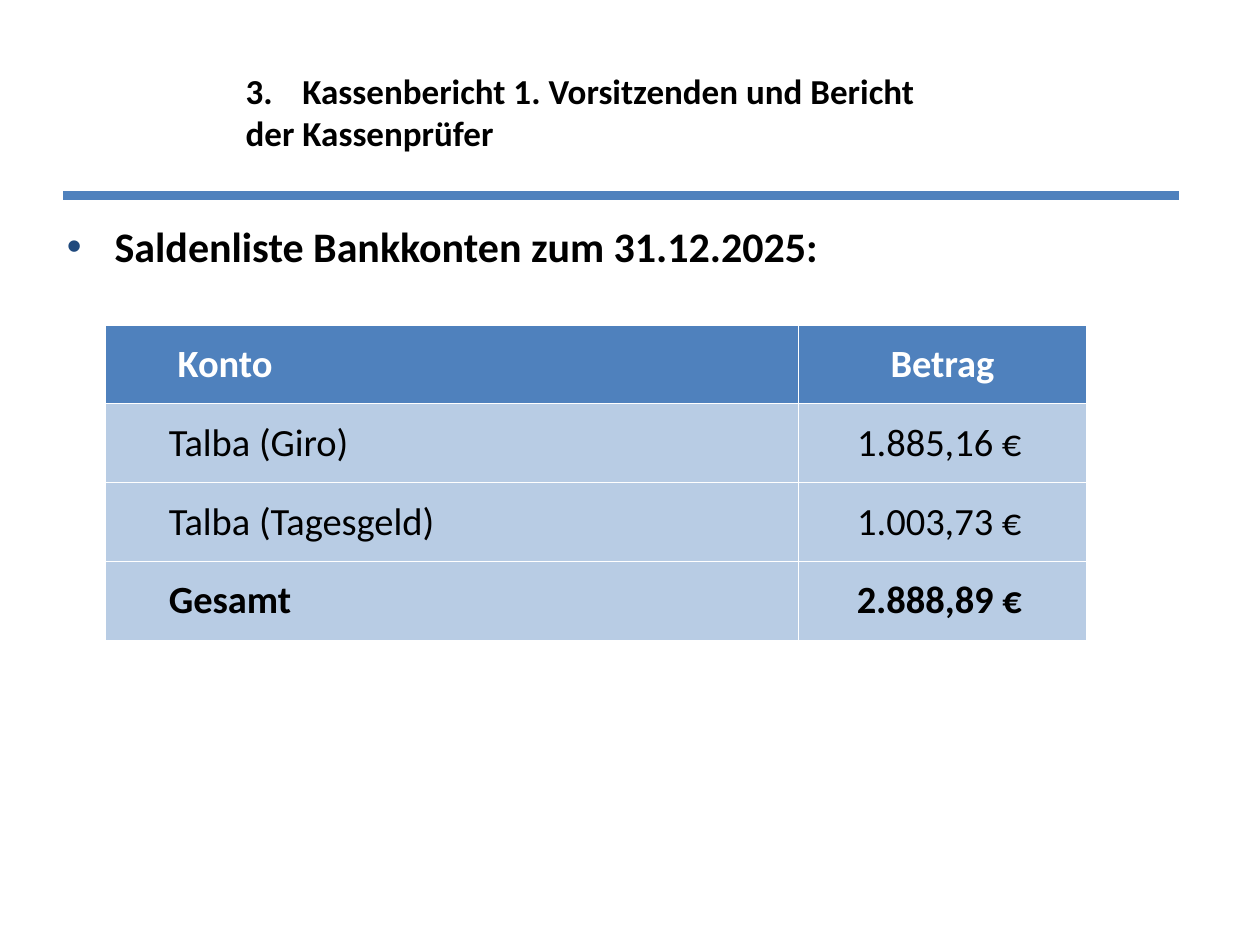
from lxml.etree import SubElement
from pptx import Presentation
from pptx.dml.color import RGBColor
from pptx.enum.shapes import MSO_CONNECTOR
from pptx.enum.text import MSO_ANCHOR, MSO_AUTO_SIZE, PP_ALIGN
from pptx.oxml.ns import qn
from pptx.util import Inches, Pt

BLUE = RGBColor(0x4F, 0x81, 0xBD)
PALE = RGBColor(0xB8, 0xCC, 0xE4)
NAVY = RGBColor(0x1F, 0x49, 0x7D)
BLACK = RGBColor(0, 0, 0)
WHITE = RGBColor(255, 255, 255)

ROWS = [
    ("Konto", "Betrag"),
    ("Talba (Giro)", "1.885,16 €"),
    ("Talba (Tagesgeld)", "1.003,73 €"),
    ("Gesamt", "2.888,89 €"),
]
COL_WIDTHS = (5.5, 2.28)
ROW_HEIGHT = 0.625


def write(p, text, size=22, color=BLACK, bold=False, align=PP_ALIGN.LEFT):
    """Put one formatted run into a paragraph."""
    p.alignment = align
    r = p.add_run()
    r.text = text
    r.font.name = "Calibri"
    r.font.size = Pt(size)
    r.font.bold = bold
    r.font.color.rgb = color


def place(sp, left, top, width, height):
    """Move a placeholder and return its text frame at a fixed size."""
    sp.left, sp.top = Inches(left), Inches(top)
    sp.width, sp.height = Inches(width), Inches(height)
    tf = sp.text_frame
    tf.word_wrap = True
    tf.auto_size = MSO_AUTO_SIZE.NONE
    return tf


def add_title(s, text):
    """Fill the title, with a tab stop after its number."""
    tf = place(s.shapes.title, 1.85, 0.3, 6.22, 1.17)
    tf.vertical_anchor = MSO_ANCHOR.MIDDLE
    tf.margin_right = Inches(0.6)
    p = tf.paragraphs[0]
    tabs = SubElement(p._p.get_or_add_pPr(), qn("a:tabLst"))
    SubElement(tabs, qn("a:tab"), pos=str(Inches(0.45)), algn="l")
    write(p, text, size=20, bold=True)


def add_rule(s):
    """Draw the line below the title."""
    y = Inches(1.55)
    line = s.shapes.add_connector(MSO_CONNECTOR.STRAIGHT, Inches(0.5), y, Inches(9.36), y)
    line.line.color.rgb = BLUE
    line.line.width = Pt(5)
    SubElement(line._element.spPr, qn("a:effectLst"))


def add_bullet(s, text):
    """Fill the body with one bulleted line."""
    p = place(s.placeholders[1], 0.43, 1.7, 9.06, 1.02).paragraphs[0]
    pPr = p._p.get_or_add_pPr()
    pPr.set("marL", str(Inches(0.38)))
    pPr.set("indent", str(-Inches(0.38)))
    color = SubElement(pPr, qn("a:buClr"))
    SubElement(color, qn("a:srgbClr"), val=str(NAVY))
    SubElement(pPr, qn("a:buFont"), typeface="Arial")
    SubElement(pPr, qn("a:buChar"), char="•")
    p.space_before = Pt(0)
    write(p, text, size=24, bold=True)


def format_cell(cell, fill, left=0.0, right=0.0):
    """Set the borders, fill and margins of a cell."""
    tcPr = cell._tc.get_or_add_tcPr()
    for side in ("lnL", "lnR", "lnT", "lnB"):
        ln = SubElement(tcPr, qn(f"a:{side}"), w=str(Pt(0.5)))
        solid = SubElement(ln, qn("a:solidFill"))
        SubElement(solid, qn("a:srgbClr"), val=str(WHITE))
    cell.fill.solid()
    cell.fill.fore_color.rgb = fill
    cell.vertical_anchor = MSO_ANCHOR.MIDDLE
    cell.margin_left, cell.margin_right = Inches(left), Inches(right)
    cell.margin_top = cell.margin_bottom = 0


def add_balances(s):
    """Add the table of account balances."""
    frame = s.shapes.add_table(
        len(ROWS), len(COL_WIDTHS), Inches(0.84), Inches(2.58),
        Inches(sum(COL_WIDTHS)), Inches(ROW_HEIGHT * len(ROWS)))
    table = frame.table
    for column, width in zip(table.columns, COL_WIDTHS):
        column.width = Inches(width)
    for i, (account, amount) in enumerate(ROWS):
        header = i == 0
        fill = BLUE if header else PALE
        style = {"color": WHITE if header else BLACK,
                 "bold": header or i == len(ROWS) - 1}
        name_cell, amount_cell = table.cell(i, 0), table.cell(i, 1)
        format_cell(name_cell, fill, left=0.57 if header else 0.5)
        format_cell(amount_cell, fill, right=0 if header else 0.05)
        write(name_cell.text_frame.paragraphs[0], account, **style)
        write(amount_cell.text_frame.paragraphs[0], amount,
              align=PP_ALIGN.CENTER, **style)


def main():
    """Build and save the slide."""
    prs = Presentation()
    prs.slide_width, prs.slide_height = Inches(10), Inches(7.5)
    s = prs.slides.add_slide(prs.slide_layouts[1])
    add_rule(s)
    add_title(s, "3.\tKassenbericht 1. Vorsitzenden und Bericht der Kassenprüfer")
    add_bullet(s, "Saldenliste Bankkonten zum 31.12.2025:")
    add_balances(s)
    prs.save("out.pptx")


if __name__ == "__main__":
    main()
